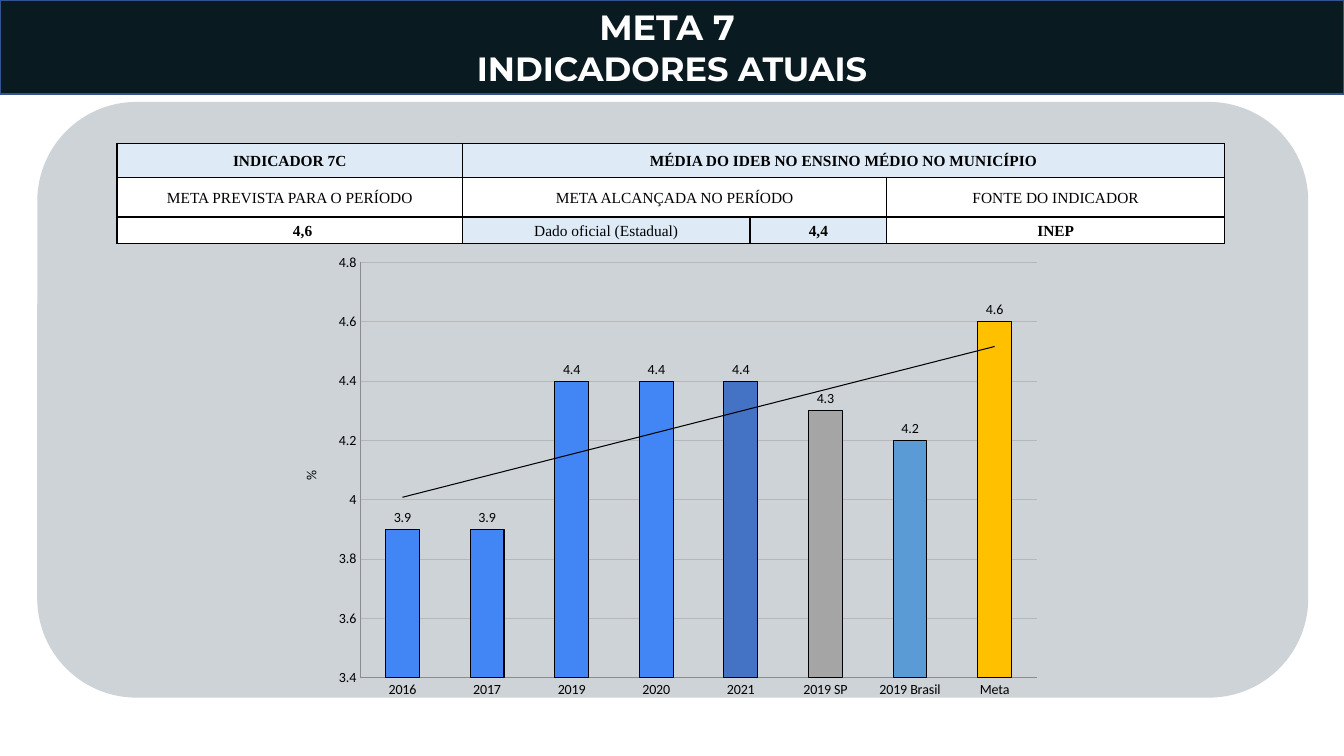
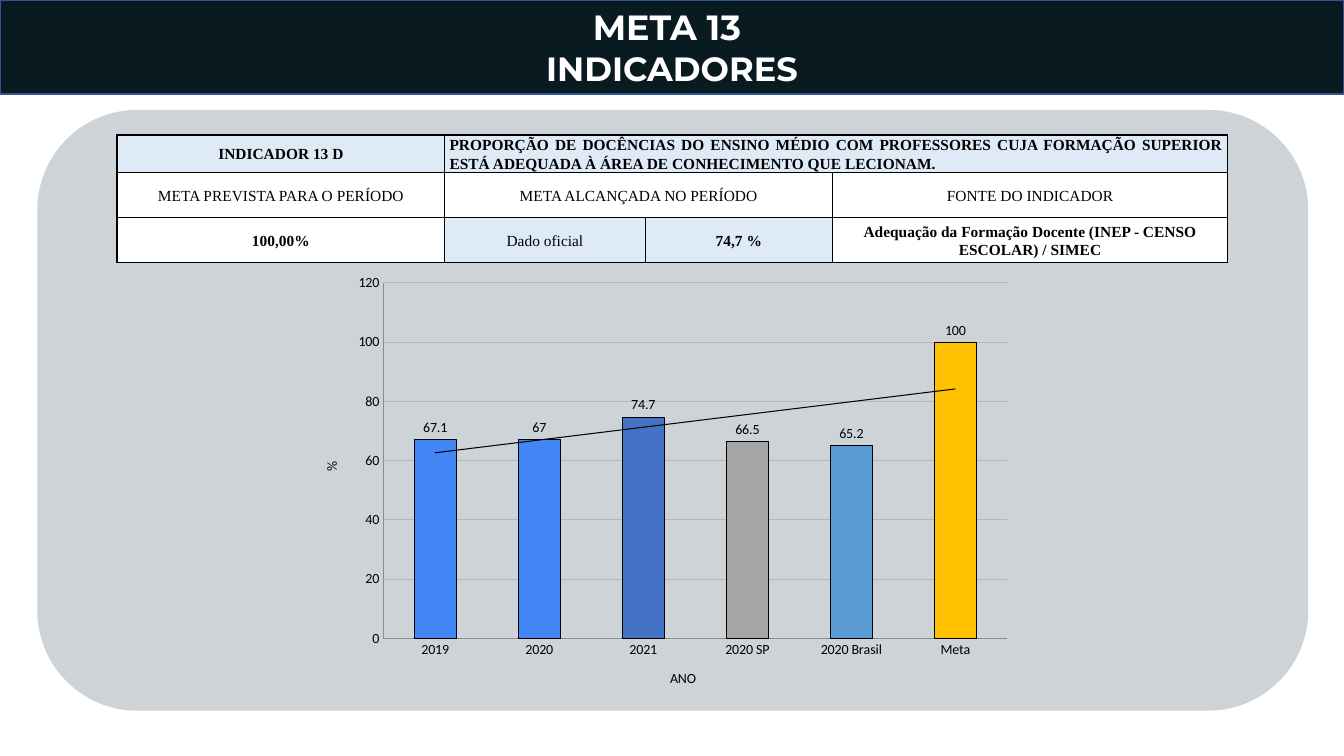
from dataclasses import dataclass

from lxml import etree
from pptx import Presentation
from pptx.chart.data import CategoryChartData
from pptx.dml.color import RGBColor
from pptx.enum.chart import XL_CHART_TYPE, XL_LABEL_POSITION, XL_TICK_MARK
from pptx.enum.shapes import MSO_SHAPE
from pptx.enum.text import MSO_ANCHOR, PP_ALIGN
from pptx.oxml import parse_xml
from pptx.oxml.ns import nsdecls, qn
from pptx.util import Cm, Pt

RECT, ROUND_RECT = MSO_SHAPE.RECTANGLE, MSO_SHAPE.ROUNDED_RECTANGLE
CENTER, JUSTIFY = PP_ALIGN.CENTER, PP_ALIGN.JUSTIFY
MIDDLE = MSO_ANCHOR.MIDDLE
COLUMNS = XL_CHART_TYPE.COLUMN_CLUSTERED
OUTSIDE_END = XL_LABEL_POSITION.OUTSIDE_END
NO_TICK = XL_TICK_MARK.NONE

SLIDE_W, SLIDE_H, BAND_H = 33.87, 19.05, 2.37
BLANK = 6
COLORS = {
    "band": "0A1A21", "band_line": "325491", "panel": "CED3D8",
    "white": "FFFFFF", "black": "000000", "cell": "DEEBF7",
    "grid": "B7B7B7", "axis": "8C8C8C", "bar": "4285F4",
    "latest": "4472C4", "state": "A5A5A5", "country": "5B9BD5", "goal": "FFC000",
}
# The last four bars are always: latest year, state, country, goal
END_BARS = ("latest", "state", "country", "goal")
CELL_FORMAT = {
    "margin_left": Cm(0.12), "margin_right": Cm(0.12),
    "margin_top": Cm(0.02), "margin_bottom": Cm(0),
    "vertical_anchor": MIDDLE,
}
PARAGRAPH_FORMAT = {"line_spacing": 1.07, "space_after": Pt(8)}
AXIS_FORMAT = {"major_tick_mark": NO_TICK, "minor_tick_mark": NO_TICK}
Box = tuple[float, float, float, float]


@dataclass
class CellSpec:
    row: int
    col: int
    text: str
    fill: str = "white"
    bold: bool = True
    span: int = 1
    align: PP_ALIGN = CENTER
    indent: float = 0


@dataclass
class TableSpec:
    left: float
    top: float
    cols: tuple[float, ...]
    rows: tuple[float, ...]
    cells: list[CellSpec]


@dataclass
class ChartSpec:
    box: Box
    plot: Box  # fractions of the chart area
    values: dict[str, float]
    scale: tuple[float, float, float]  # minimum, maximum, step
    category_title: str = ""


@dataclass
class SlideSpec:
    title: str
    subtitle: str
    panel: Box
    table: TableSpec
    chart: ChartSpec


def rgb(name: str) -> RGBColor:
    return RGBColor.from_string(COLORS[name])


def set_all(target, values: dict) -> None:
    for name, value in values.items():
        setattr(target, name, value)


def set_font(font, name: str, size: float, color: str, bold: bool = False) -> None:
    set_all(font, {"name": name, "size": Pt(size), "bold": bold})
    font.color.rgb = rgb(color)


def set_line(line, color: str, width: float) -> None:
    line.color.rgb = rgb(color)
    line.width = Pt(width)


def add_block(s, shape: MSO_SHAPE, box: Box, fill: str):
    sp = s.shapes.add_shape(shape, *map(Cm, box))
    sp.shadow.inherit = False
    sp.fill.solid()
    sp.fill.fore_color.rgb = rgb(fill)
    sp.line.fill.background()
    return sp


def add_band(s, title: str, subtitle: str) -> None:
    sp = add_block(s, RECT, (0, 0, SLIDE_W, BAND_H), "band")
    set_line(sp.line, "band_line", 1)
    tf = sp.text_frame
    set_all(tf, {"word_wrap": True, "vertical_anchor": MIDDLE})
    for p, text, size in ((tf.paragraphs[0], title, 25),
                          (tf.add_paragraph(), subtitle, 24)):
        p.alignment = CENTER
        r = p.add_run()
        r.text = text
        set_font(r.font, "Montserrat", size, "white", True)


def set_borders(cell) -> None:
    props = cell._tc.get_or_add_tcPr()
    for i, side in enumerate(("lnL", "lnR", "lnT", "lnB")):
        props.insert(i, parse_xml(
            f'<a:{side} {nsdecls("a")} w="12700"><a:solidFill>'
            f'<a:srgbClr val="{COLORS["black"]}"/></a:solidFill></a:{side}>'))


def add_grid(s, spec: TableSpec) -> None:
    table = s.shapes.add_table(
        len(spec.rows), len(spec.cols), Cm(spec.left), Cm(spec.top),
        Cm(sum(spec.cols)), Cm(sum(spec.rows))).table
    set_all(table, {"first_row": False, "horz_banding": False})
    for column, width in zip(table.columns, spec.cols):
        column.width = Cm(width)
    for row, height in zip(table.rows, spec.rows):
        row.height = Cm(height)
    for item in spec.cells:
        cell = table.cell(item.row, item.col)
        if item.span > 1:
            cell.merge(table.cell(item.row, item.col + item.span - 1))
        set_all(cell, CELL_FORMAT)
        p = cell.text_frame.paragraphs[0]
        set_all(p, PARAGRAPH_FORMAT)
        p.alignment = item.align
        if item.indent:
            p._p.get_or_add_pPr().set("marL", str(Cm(item.indent)))
        r = p.add_run()
        r.text = item.text
        set_font(r.font, "Times New Roman", 11, "black", item.bold)
        for col in range(item.col, item.col + item.span):
            part = table.cell(item.row, col)
            part.fill.solid()
            part.fill.fore_color.rgb = rgb(item.fill)
            set_borders(part)


def set_axis_title(axis, text: str, rotation: int = 0) -> None:
    tf = axis.axis_title.text_frame
    tf._txBody.bodyPr.set("rot", str(rotation))
    r = tf.paragraphs[0].add_run()
    r.text = text
    set_font(r.font, "Calibri", 10, "black")


def set_plot_area(chart, plot: Box) -> None:
    area = chart._chartSpace.chart.plotArea
    for old in area.findall(qn("c:layout")):
        area.remove(old)
    layout = etree.Element(qn("c:layout"))
    manual = etree.SubElement(layout, qn("c:manualLayout"))
    settings = {"layoutTarget": "inner", "xMode": "edge", "yMode": "edge"}
    settings.update(zip("xywh", map(str, plot)))
    for tag, value in settings.items():
        etree.SubElement(manual, qn(f"c:{tag}")).set("val", value)
    area.insert(0, layout)


def add_trend(series) -> None:
    series._element.find(qn("c:cat")).addprevious(parse_xml(
        f'<c:trendline {nsdecls("c", "a")}><c:spPr><a:ln w="9525"><a:solidFill>'
        f'<a:srgbClr val="{COLORS["black"]}"/></a:solidFill></a:ln></c:spPr>'
        '<c:trendlineType val="linear"/><c:dispRSqr val="0"/>'
        '<c:dispEq val="0"/></c:trendline>'))


def add_bars(s, spec: ChartSpec) -> None:
    data = CategoryChartData()
    data.categories = list(spec.values)
    data.add_series("Series 1", list(spec.values.values()))
    chart = s.shapes.add_chart(COLUMNS, *map(Cm, spec.box), data).chart
    set_all(chart, {"has_legend": False, "has_title": False})
    set_font(chart.font, "Calibri", 10, "black")
    set_plot_area(chart, spec.plot)

    # Bars, labels and trend
    plot = chart.plots[0]
    set_all(plot, {"gap_width": 150, "vary_by_categories": False})
    series = plot.series[0]
    series.invert_if_negative = False
    first_end = len(spec.values) - len(END_BARS)
    bars = [(series, "bar")]
    bars += [(series.points[first_end + i], name) for i, name in enumerate(END_BARS)]
    for bar, color in bars:
        bar.format.fill.solid()
        bar.format.fill.fore_color.rgb = rgb(color)
        set_line(bar.format.line, "black", 0.75)
    labels = series.data_labels
    set_all(labels, {"show_value": True, "position": OUTSIDE_END})
    set_font(labels.font, "Calibri", 10, "black")
    add_trend(series)

    # Axes
    low, high, step = spec.scale
    value_axis, category_axis = chart.value_axis, chart.category_axis
    set_all(value_axis, {"minimum_scale": low, "maximum_scale": high,
                         "major_unit": step})
    for axis in (value_axis, category_axis):
        set_all(axis, AXIS_FORMAT)
        set_font(axis.tick_labels.font, "Calibri", 10, "black")
        set_line(axis.format.line, "axis", 0.75)
    set_line(value_axis.major_gridlines.format.line, "grid", 0.75)
    set_axis_title(value_axis, "%", -5400000)
    if spec.category_title:
        set_axis_title(category_axis, spec.category_title)


def indicator_cells(name: str, heading: str, goal: str, data_label: str,
                    result: str, source: str, heading_align: PP_ALIGN = CENTER,
                    goal_indent: float = 0) -> list[CellSpec]:
    return [
        CellSpec(0, 0, name, "cell"),
        CellSpec(0, 1, heading, "cell", span=3, align=heading_align),
        CellSpec(1, 0, "META PREVISTA PARA O PERÍODO", bold=False),
        CellSpec(1, 1, "META ALCANÇADA NO PERÍODO", bold=False, span=2),
        CellSpec(1, 3, "FONTE DO INDICADOR", bold=False),
        CellSpec(2, 0, goal, indent=goal_indent),
        CellSpec(2, 1, data_label, "cell", bold=False),
        CellSpec(2, 2, result, "cell"),
        CellSpec(2, 3, source),
    ]


SLIDES = [
    SlideSpec(
        "META 7 ", "INDICADORES ATUAIS", (0.94, 2.57, 32.03, 15.01),
        TableSpec(2.95, 3.61, (8.71, 7.24, 3.45, 8.51), (0.86, 1, 0.66),
                  indicator_cells(
                      "INDICADOR 7C", "MÉDIA DO IDEB NO ENSINO MÉDIO NO MUNICÍPIO",
                      "4,6", "Dado oficial (Estadual)", "4,4", "INEP",
                      goal_indent=0.64)),
        ChartSpec((7.14, 6.15, 19.38, 11.63), (0.1, 0.04, 0.88, 0.9),
                  {"2016": 3.9, "2017": 3.9, "2019": 4.4, "2020": 4.4, "2021": 4.4,
                   "2019 SP": 4.3, "2019 Brasil": 4.2, "Meta": 4.6},
                  (3.4, 4.8, 0.2))),
    SlideSpec(
        "META 13 ", "INDICADORES", (0.94, 2.77, 32.03, 15.14),
        TableSpec(2.95, 3.4, (8.26, 5.05, 4.72, 9.96), (0.84, 1.14, 1.14),
                  indicator_cells(
                      "INDICADOR 13 D",
                      "PROPORÇÃO DE DOCÊNCIAS DO ENSINO MÉDIO COM PROFESSORES CUJA "
                      "FORMAÇÃO SUPERIOR ESTÁ ADEQUADA À ÁREA DE CONHECIMENTO QUE "
                      "LECIONAM.",
                      "100,00%", "Dado oficial", "74,7 %",
                      "Adequação da Formação Docente (INEP - CENSO ESCOLAR) / SIMEC",
                      heading_align=JUSTIFY)),
        ChartSpec((7.67, 6.68, 18.08, 11.2), (0.11, 0.04, 0.87, 0.8),
                  {"2019": 67.1, "2020": 67, "2021": 74.7, "2020 SP": 66.5,
                   "2020 Brasil": 65.2, "Meta": 100},
                  (0, 120, 20), "ANO")),
]


def main() -> None:
    prs = Presentation()
    set_all(prs, {"slide_width": Cm(SLIDE_W), "slide_height": Cm(SLIDE_H)})
    for spec in SLIDES:
        s = prs.slides.add_slide(prs.slide_layouts[BLANK])
        add_band(s, spec.title, spec.subtitle)
        add_block(s, ROUND_RECT, spec.panel, "panel")
        add_grid(s, spec.table)
        add_bars(s, spec.chart)
    prs.save("out.pptx")


if __name__ == "__main__":
    main()
